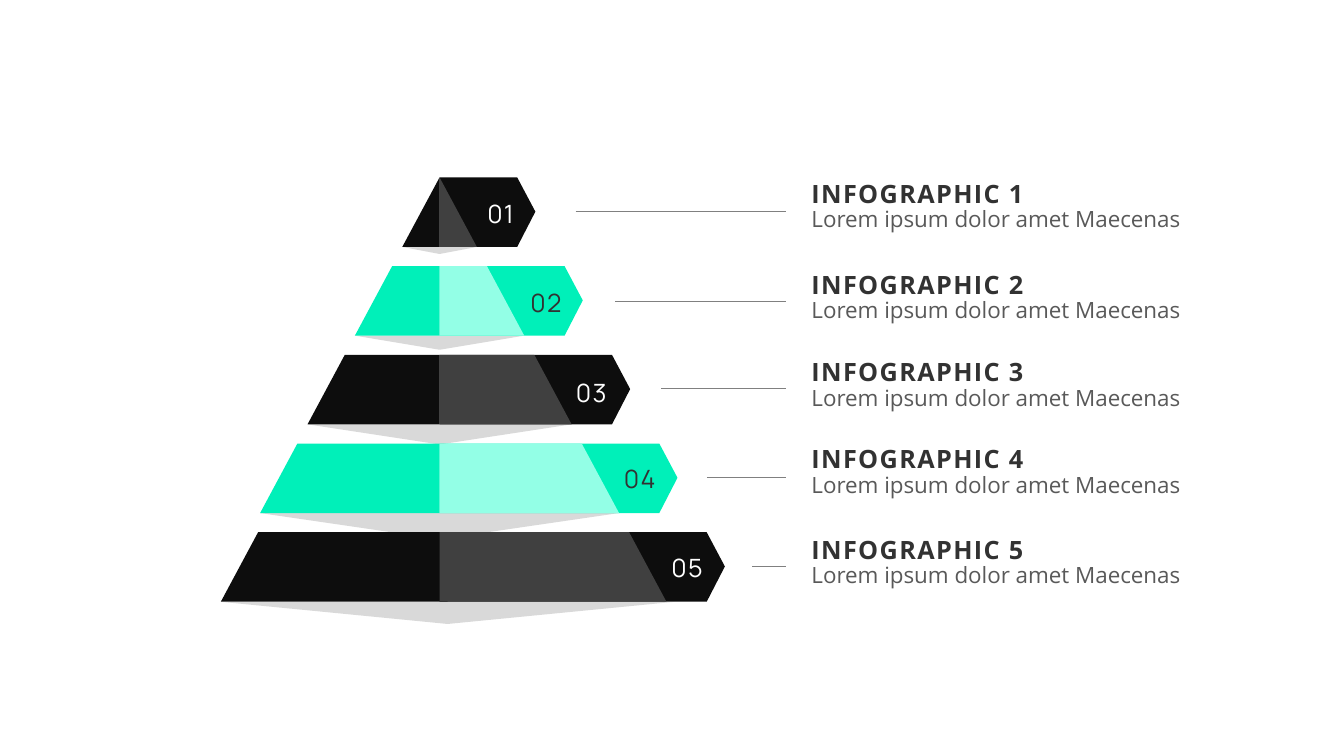
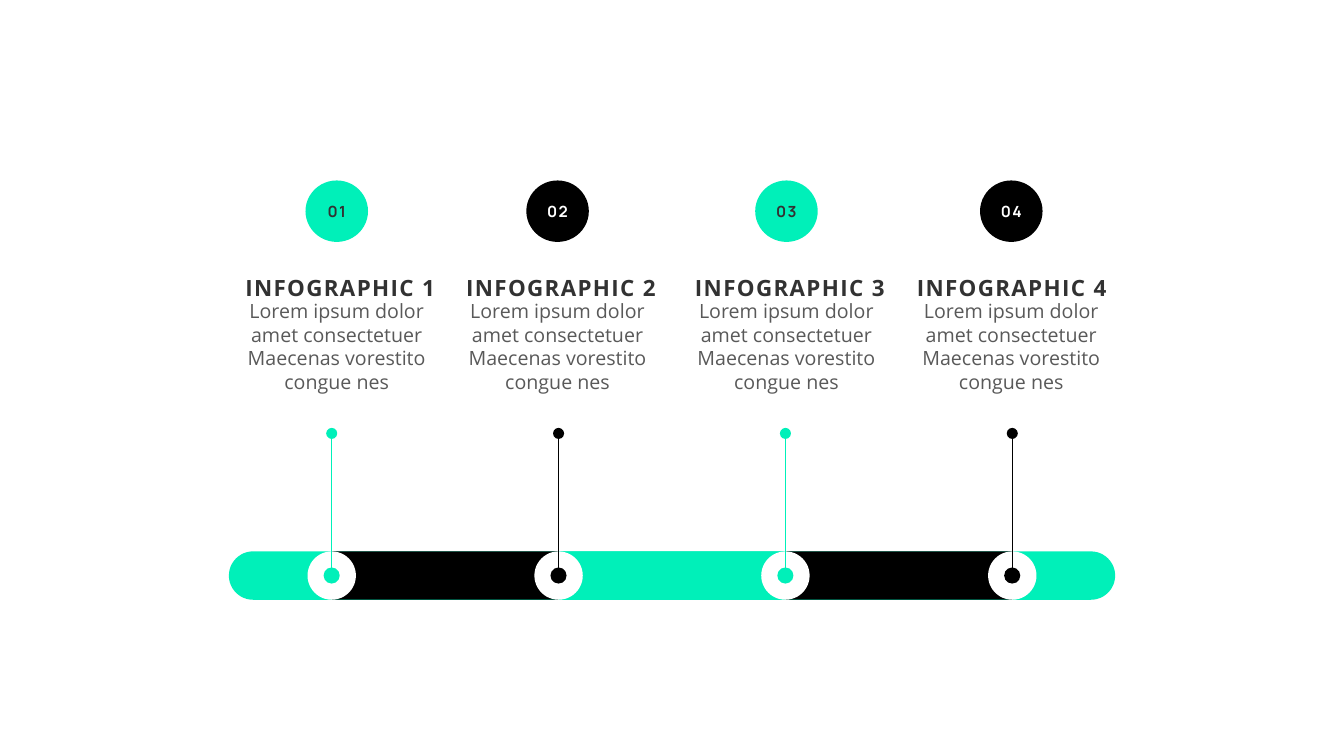
from lxml.etree import SubElement
from pptx import Presentation
from pptx.dml.color import RGBColor
from pptx.enum.shapes import MSO_CONNECTOR, MSO_SHAPE
from pptx.enum.text import MSO_ANCHOR, MSO_AUTO_SIZE, PP_ALIGN
from pptx.oxml.ns import qn
from pptx.util import Emu, Pt

PX = 9144  # EMU in one px, 100 px to the inch
BLACK, WHITE, TEAL = "000000", "FFFFFF", "00F0B9"
COAL, SLATE, MINT = "0D0D0D", "404040", "93FFE6"
SHADE, RULE = "D9D9D9", "808080"
HEADING, BODY = "323232", "595959"
TEXT_FONT, NUMBER_FONT = "Open Sans", "Manrope"


def px(length):
    return Emu(round(length * PX))


def color(value):
    return RGBColor.from_string(value)


def paint(shape, fill):
    shape.shadow.inherit = False
    shape.fill.solid()
    shape.fill.fore_color.rgb = color(fill)
    shape.line.fill.background()
    return shape


def write(shape, text, size, ink, font=TEXT_FONT, bold=False, spacing=0, centered=False):
    """Put one styled paragraph into a shape; spacing is in points."""
    para = shape.text_frame.paragraphs[0]
    para.text = text
    para.alignment = PP_ALIGN.CENTER if centered else PP_ALIGN.LEFT
    span = para.runs[0]
    span.font.name = font
    span.font.size = Pt(size)
    span.font.bold = bold
    span.font.color.rgb = color(ink)
    if spacing:
        span.font._element.set("spc", str(spacing * 100))


def add_text(page, box, text, size, ink, **style):
    shape = page.shapes.add_textbox(*map(px, box))
    shape.text_frame.word_wrap = True
    shape.text_frame.auto_size = MSO_AUTO_SIZE.SHAPE_TO_FIT_TEXT
    write(shape, text, size, ink, **style)


def add_polygon(page, points, fill):
    builder = page.shapes.build_freeform(*points[0], scale=PX)
    builder.add_line_segments(points[1:], close=True)
    paint(builder.convert_to_shape(), fill)


def add_preset(page, kind, box, fill):
    return paint(page.shapes.add_shape(kind, *map(px, box)), fill)


def add_disc(page, center_x, center_y, size, fill):
    box = (center_x - size / 2, center_y - size / 2, size, size)
    add_preset(page, MSO_SHAPE.OVAL, box, fill)


def add_line(page, start, end, ink, width):
    line = page.shapes.add_connector(MSO_CONNECTOR.STRAIGHT, *map(px, start + end))
    line.line.color.rgb = color(ink)
    line.line.width = Pt(width)
    SubElement(line._element.spPr, qn("a:effectLst"))


def add_tier(page, center, top, half_base, depth, shift, colors):
    """One pyramid layer: shadow, arrow tab, left face (moved by shift), right face."""
    side, light = colors
    height, slant = 69, 37
    bottom = top + height
    half_top = half_base - slant
    left_center = center + shift
    tab_right = center + half_base + 40

    add_polygon(page, [(left_center, bottom + depth), (left_center - half_base, bottom),
                       (left_center + half_base, bottom)], SHADE)
    add_polygon(page, [(tab_right, bottom), (center, bottom), (center, top),
                       (tab_right, top), (tab_right + 18, top + height / 2)], side)
    for direction, middle, fill in ((-1, left_center, side), (1, center, light)):
        add_polygon(page, [(middle, top), (middle, bottom),
                           (middle + direction * half_base, bottom),
                           (middle + direction * half_top, top)], fill)


def add_label(page, left, top, title):
    add_text(page, (left, top, 261, 40), title, 18, HEADING, bold=True, spacing=1)
    add_text(page, (left, top + 27, 431, 37), "Lorem ipsum dolor amet Maecenas", 16, BODY)


def add_pyramid_slide(deck):
    page = deck.slides.add_slide(deck.slide_layouts[6])
    schemes = ((COAL, SLATE, WHITE), (TEAL, MINT, HEADING))
    # shadow depth, left shift, number left and top, rule start and height, label top
    tiers = (
        (7, 0, (468, 192), (571, 210), 172),
        (14, 0, (513, 280), (610, 299), 262),
        (20, 0, (558, 369), (656, 385), 349),
        (26, 0, (606, 455), (701, 474), 435),
        (22, 8, (653, 543), (746, 562), 525),
    )
    for index, (depth, shift, number_at, rule_at, label_top) in enumerate(tiers):
        side, light, ink = schemes[index % 2]
        add_tier(page, 436, 176 + 88 * index, 37 + 47 * index, depth, shift, (side, light))
        add_text(page, number_at + (57, 40), f"0{index + 1}", 18, ink,
                 font=NUMBER_FONT, spacing=1, centered=True)
        add_line(page, rule_at, (780, rule_at[1]), RULE, 0.5)
        add_label(page, 795, label_top, f"INFOGRAPHIC {index + 1}")


def add_track(page, left, top, width, height):
    """The banded bar with its four pins."""
    lead, step = 102, 225
    pill = add_preset(page, MSO_SHAPE.ROUNDED_RECTANGLE, (left, top, width, height), TEAL)
    pill.adjustments[0] = 0.5
    stops = [left + lead + step * index for index in range(4)]
    for stop, fill in zip(stops, (BLACK, TEAL, BLACK)):
        add_preset(page, MSO_SHAPE.RECTANGLE, (stop, top, step, height), fill)
    middle = top + height / 2
    pin_top = top - 117
    for stop, fill in zip(stops, (TEAL, BLACK) * 2):
        add_disc(page, stop, middle, height, WHITE)
        add_disc(page, stop, middle, 16, fill)
        add_line(page, (stop, pin_top), (stop, middle), fill, 0.75)
        add_disc(page, stop, pin_top, 11, fill)


def add_column(page, center, top, heading_left, number, fill, ink):
    badge = add_preset(page, MSO_SHAPE.OVAL, (center - 31, top, 62, 61), fill)
    badge.text_frame.word_wrap = False
    badge.text_frame.vertical_anchor = MSO_ANCHOR.MIDDLE
    write(badge, f"0{number}", 11, ink, font=NUMBER_FONT, bold=True, spacing=1, centered=True)
    add_text(page, (heading_left, top + 88, 255, 37), f"INFOGRAPHIC {number}", 16, HEADING,
             bold=True, spacing=1, centered=True)
    add_text(page, (center - 101, top + 113, 202, 104),
             "Lorem ipsum dolor amet consectetuer Maecenas vorestito congue nes",
             14, BODY, centered=True)


def add_timeline_slide(deck):
    page = deck.slides.add_slide(deck.slide_layouts[6])
    add_track(page, 227, 547, 879, 48)
    schemes = ((TEAL, HEADING), (BLACK, WHITE))
    columns = ((334, 210), (553, 429), (780, 656), (1003, 876))
    for index, (center, heading_left) in enumerate(columns):
        add_column(page, center, 179, heading_left, index + 1, *schemes[index % 2])


def main():
    deck = Presentation()
    deck.slide_width, deck.slide_height = px(1333), px(750)
    add_pyramid_slide(deck)
    add_timeline_slide(deck)
    deck.save("out.pptx")


if __name__ == "__main__":
    main()
